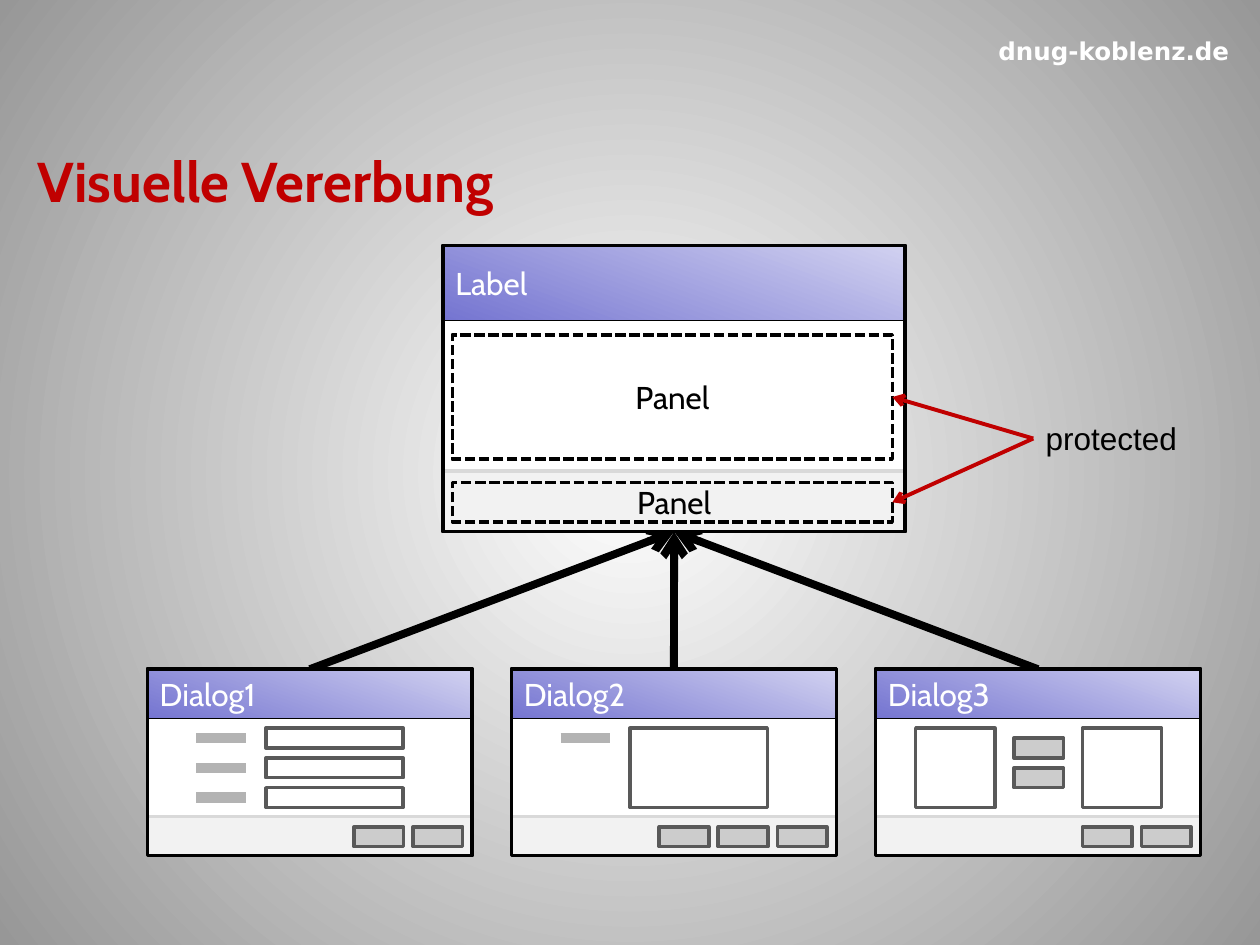
from lxml import etree
from pptx import Presentation
from pptx.dml.color import RGBColor
from pptx.enum.dml import MSO_LINE
from pptx.enum.shapes import MSO_CONNECTOR, MSO_SHAPE
from pptx.enum.text import MSO_ANCHOR, MSO_AUTO_SIZE, PP_ALIGN
from pptx.oxml.ns import qn
from pptx.util import Cm, Pt

BLACK, WHITE, RED, GREY = "000000", "FFFFFF", "C00000", "595959"
HEADER_LIGHT, HEADER_DARK = "D1D1F0", "7575D1"
FIELD_H, ROW_STEP = 0.4, 0.6
BUTTON_W, BUTTON_STEP = 1.0, 1.19


def rgb(hex_color):
    return RGBColor.from_string(hex_color)


def set_gradient(fill, first, last):
    fill.gradient()
    for stop, color, pos in zip(fill.gradient_stops, (first, last), (0, 1)):
        stop.color.rgb = rgb(color)
        stop.position = pos


def add_text(shape, text, color, size=18, font="Cabin", bold=False,
             align=PP_ALIGN.LEFT, anchor=MSO_ANCHOR.MIDDLE):
    tf = shape.text_frame
    tf.vertical_anchor = anchor
    p = tf.paragraphs[0]
    p.alignment = align
    r = p.add_run()
    r.text = text
    f = p.font
    f.name, f.size, f.bold, f.color.rgb = font, Pt(size), bold, rgb(color)
    return r


def add_rect(slide, x, y, w, h, fill=None, line=BLACK, width=2, dashed=False):
    sp = slide.shapes.add_shape(MSO_SHAPE.RECTANGLE, Cm(x), Cm(y), Cm(w), Cm(h))
    sp.shadow.inherit = False
    if fill:
        sp.fill.solid()
        sp.fill.fore_color.rgb = rgb(fill)
    else:
        sp.fill.background()
    sp.line.color.rgb = rgb(line)
    sp.line.width = Pt(width)
    if dashed:
        sp.line.dash_style = MSO_LINE.SQUARE_DOT
    return sp


def add_line(slide, x1, y1, x2, y2, color, width):
    c = slide.shapes.add_connector(
        MSO_CONNECTOR.STRAIGHT, Cm(x1), Cm(y1), Cm(x2), Cm(y2))
    c.line.color.rgb = rgb(color)
    c.line.width = Pt(width)
    etree.SubElement(c._element.spPr, qn("a:effectLst"))
    return c


def add_arrow(slide, start, start_side, end, end_side, color, width):
    c = add_line(slide, 0, 0, 0, 0, color, width)
    c.begin_connect(start, start_side)
    c.end_connect(end, end_side)
    ln = c.line._get_or_add_ln()
    etree.SubElement(ln, qn("a:tailEnd"), type="arrow")
    return c


def add_window(slide, x, y, w, h, caption, header_h, footer_h):
    """White window with caption bar and footer; returns frame and footer."""
    add_rect(slide, x, y, w, h, WHITE)
    header = add_rect(slide, x, y, w, header_h, width=0.25)
    set_gradient(header.fill, HEADER_LIGHT, HEADER_DARK)
    header.fill.gradient_angle = 250
    add_text(header, caption, WHITE)
    footer = add_rect(slide, x, y + h - footer_h, w, footer_h, "F2F2F2", "D9D9D9")
    return add_rect(slide, x, y, w, h), footer


def add_base_window(slide, x, y, w, h):
    """Parent dialog; returns its frame and the two protected panels."""
    frame, footer = add_window(slide, x, y, w, h, "Label", 1.5, 1.22)
    add_text(footer, "Panel", BLACK, align=PP_ALIGN.CENTER)
    content = add_rect(slide, x + 0.19, y + 1.8, 8.87, 2.51, dashed=True)
    add_text(content, "Panel", BLACK, align=PP_ALIGN.CENTER)
    buttons = add_rect(slide, x + 0.19, y + 4.78, 8.87, 0.79, dashed=True)
    return frame, (content, buttons)


def add_button(slide, x, y):
    add_rect(slide, x, y, BUTTON_W, FIELD_H, "CCCCCC", GREY)


def add_dialog(slide, x, y, w, h, caption, buttons):
    frame, _ = add_window(slide, x, y, w, h, caption, 1.0, 0.79)
    for i in range(buttons):
        add_button(slide, x + 5.36 - i * BUTTON_STEP, y + 3.18)
    return frame


def add_field(slide, x, y, h=FIELD_H):
    """Input box with a grey bar as its label."""
    add_rect(slide, x + 1.4, y, 2.77, h, WHITE, GREY)
    mid = y + FIELD_H / 2
    add_line(slide, x, mid, x + 1, mid, "B3B3B3", 6)


def add_form(slide, x, y):
    for i in range(3):
        add_field(slide, x + 0.99, y + 1.19 + i * ROW_STEP)


def add_memo(slide, x, y):
    add_field(slide, x + 0.99, y + 1.19, h=1.6)


def add_picker(slide, x, y):
    for dx in (0.81, 4.17):
        add_rect(slide, x + dx, y + 1.19, 1.6, 1.6, WHITE, GREY)
    for i in range(2):
        add_button(slide, x + 2.79, y + 1.39 + i * ROW_STEP)


def add_background(slide):
    fill = slide.background.fill
    set_gradient(fill, WHITE, "979797")
    grad = slide.background._cSld.find(".//" + qn("a:gradFill"))
    grad.remove(grad.find(qn("a:lin")))
    path = etree.SubElement(grad, qn("a:path"), {"path": "circle"})
    etree.SubElement(path, qn("a:fillToRect"),
                     {side: "50000" for side in "ltrb"})


def add_heading(slide, x, y, w, h):
    title = slide.shapes.title
    title.left, title.top, title.width, title.height = Cm(x), Cm(y), Cm(w), Cm(h)
    r = add_text(title, "Visuelle Vererbung", RED, size=32, bold=True)
    effects = etree.SubElement(r._r.get_or_add_rPr(), qn("a:effectLst"))
    shadow = etree.SubElement(effects, qn("a:outerShdw"), blurRad="38100",
                              dist="38100", dir="2700000", algn="tl")
    etree.SubElement(shadow, qn("a:srgbClr"), val=BLACK)


def add_site_name(slide, x, y, w, h):
    tb = slide.shapes.add_textbox(Cm(x), Cm(y), Cm(w), Cm(h))
    tb.text_frame.word_wrap = True
    add_text(tb, "dnug-koblenz.de", WHITE, 14, "DejaVu Sans", True, PP_ALIGN.CENTER)


def add_note(slide, x, y, w, h, targets):
    """Access note with an arrow to each target's right side."""
    tb = slide.shapes.add_textbox(Cm(x), Cm(y), Cm(w), Cm(h))
    tb.text_frame.word_wrap = False
    tb.text_frame.auto_size = MSO_AUTO_SIZE.SHAPE_TO_FIT_TEXT
    add_text(tb, "protected", BLACK, font="Arial", anchor=MSO_ANCHOR.TOP)
    for target in targets:
        add_arrow(slide, tb, 1, target, 3, RED, 2.25)


def main():
    prs = Presentation()
    prs.slide_width, prs.slide_height = Cm(25.4), Cm(19.05)
    slide = prs.slides.add_slide(prs.slide_layouts[5])
    add_background(slide)
    add_site_name(slide, 19.51, 0.53, 5.89, 0.99)
    add_heading(slide, 0.51, 2.31, 24.4, 2.64)

    # Parent dialog and its protected panels
    base, panels = add_base_window(slide, 8.93, 4.95, 9.32, 5.77)
    add_note(slide, 20.83, 8.33, 3.18, 1.02, panels)

    # Derived dialogs, with inheritance arrows behind everything
    dialogs = (("Dialog1", 2, add_form), ("Dialog2", 3, add_memo),
               ("Dialog3", 2, add_picker))
    for i, (caption, buttons, add_content) in enumerate(dialogs):
        x, y = 2.97 + i * 7.34, 13.49
        frame = add_dialog(slide, x, y, 6.55, 3.76, caption, buttons)
        add_content(slide, x, y)
        arrow = add_arrow(slide, frame, 0, base, 2, BLACK, 4.5)
        slide.shapes._spTree.insert(2, arrow._element)

    prs.save("out.pptx")


if __name__ == "__main__":
    main()
